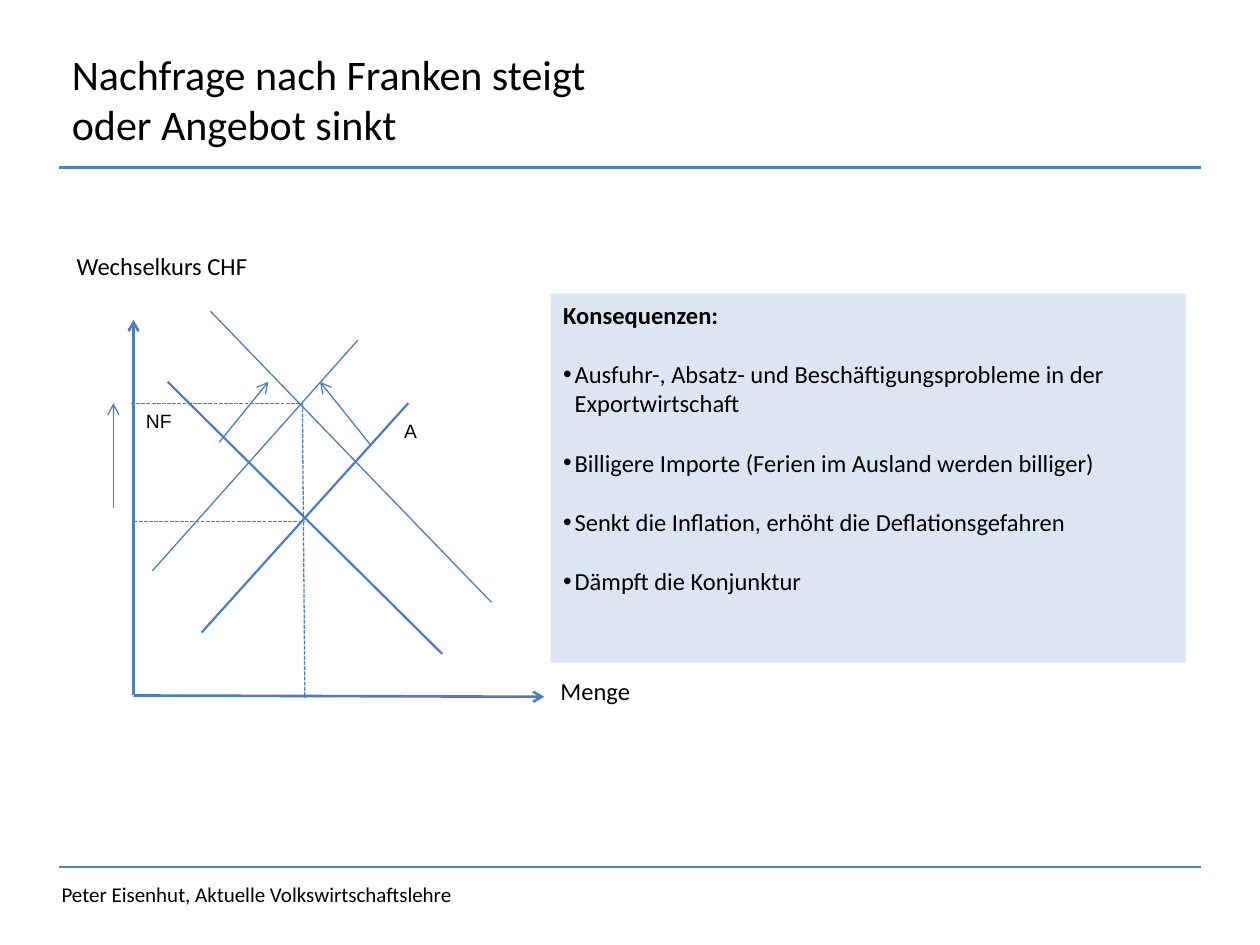
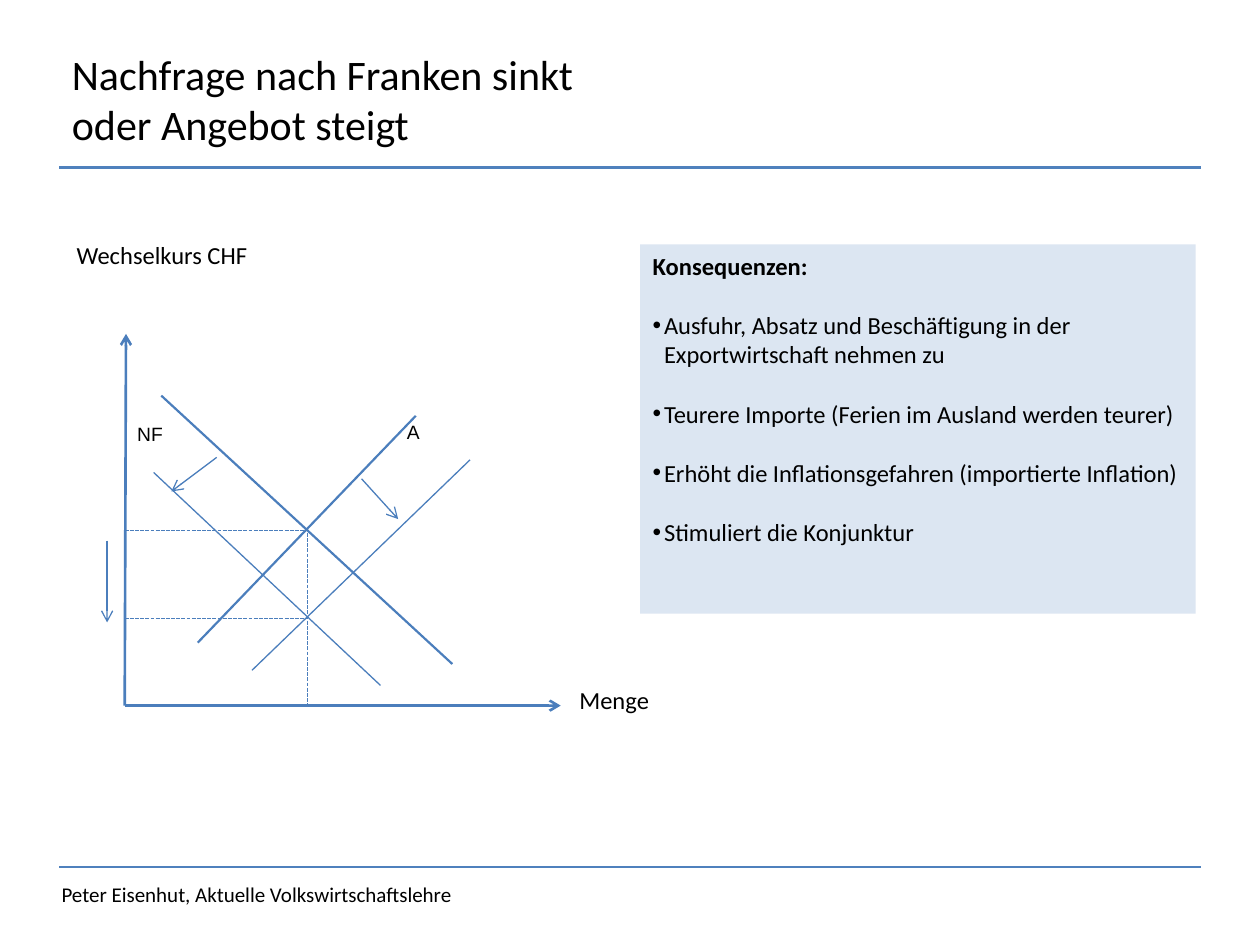
from lxml import etree
from pptx import Presentation
from pptx.dml.color import RGBColor
from pptx.enum.dml import MSO_LINE
from pptx.enum.shapes import MSO_CONNECTOR
from pptx.enum.text import MSO_ANCHOR, MSO_AUTO_SIZE, PP_ALIGN
from pptx.oxml.ns import qn
from pptx.util import Inches, Pt

BLACK = RGBColor(0x00, 0x00, 0x00)
RULE = RGBColor(0x4F, 0x81, 0xBD)
BLUE = RGBColor(0x4B, 0x7E, 0xBC)
PALE = RGBColor(0xDC, 0xE6, 0xF2)
DASH = MSO_LINE.SQUARE_DOT
STRAIGHT = MSO_CONNECTOR.STRAIGHT
MIDDLE = MSO_ANCHOR.MIDDLE
TOP = MSO_ANCHOR.TOP
FIXED = MSO_AUTO_SIZE.NONE
LEFT = PP_ALIGN.LEFT
FONT = "Calibri"
SMALL = "Arial"
FOOTER = "Peter Eisenhut, Aktuelle Volkswirtschaftslehre"
HEAD = "Konsequenzen:"
INDENT = Inches(0.09)
GAP = Pt(17)
THIN, BOLD, AXIS = 0.75, 1.25, 1.5


class Deck:
    def __init__(self):
        self.file = Presentation()
        self.file.slide_width = Inches(10)
        self.file.slide_height = Inches(7.5)
        self.slide = None

    def page(self, title):
        self.slide = self.file.slides.add_slide(self.file.slide_layouts[1])
        for y in (1.33, 6.88):
            self.line((0.47, y), (9.53, y), BOLD, color=RULE)
        self.label(FOOTER, (0.39, 6.95, 6.02, 0.3), 12)
        shape = self.slide.shapes.title
        self.place(shape, (0.47, 0.16, 7.89, 1.25))
        shape.text_frame.text = title
        self.style(shape.text_frame, 24, anchor=MIDDLE)

    def place(self, shape, area):
        shape.left, shape.top, shape.width, shape.height = map(Inches, area)

    def style(self, frame, size, font=FONT, anchor=TOP):
        frame.word_wrap = True
        frame.auto_size = FIXED
        frame.vertical_anchor = anchor
        for para in frame.paragraphs:
            para.alignment = LEFT
            for run in para.runs:
                run.font.name = font
                run.font.size = Pt(size)
                run.font.color.rgb = BLACK

    def label(self, text, area, size=14, font=FONT):
        box = self.slide.shapes.add_textbox(*map(Inches, area))
        box.text_frame.text = text
        self.style(box.text_frame, size, font)

    def line(self, start, end, width=THIN, arrow=False, dash=False, color=BLUE):
        ends = map(Inches, (*start, *end))
        link = self.slide.shapes.add_connector(STRAIGHT, *ends)
        link.line.color.rgb = color
        link.line.width = Pt(width)
        if dash:
            link.line.dash_style = DASH
        props = link.element.spPr
        if arrow:
            tip = etree.SubElement(props.find(qn("a:ln")), qn("a:tailEnd"))
            tip.set("type", "arrow")
        etree.SubElement(props, qn("a:effectLst"))

    def panel(self, area, items):
        body = self.slide.placeholders[1]
        self.place(body, area)
        body.fill.solid()
        body.fill.fore_color.rgb = PALE
        frame = body.text_frame
        frame.text = "\n".join([HEAD, *items])
        self.style(frame, 14)
        head, *rest = frame.paragraphs
        head.space_before = Pt(0)
        head.runs[0].font.bold = True
        self.bullet(head, 0)
        for para in rest:
            para.space_before = GAP
            self.bullet(para, INDENT, "•")

    def bullet(self, para, indent, sign=None):
        props = para._p.get_or_add_pPr()
        props.set("marL", str(indent))
        props.set("indent", str(-indent))
        if sign:
            etree.SubElement(props, qn("a:buFont")).set("typeface", SMALL)
            etree.SubElement(props, qn("a:buChar")).set("char", sign)
        else:
            etree.SubElement(props, qn("a:buNone"))

    def graph(self, zero, top, right, curves, shifts, moves, guides):
        for end in (top, right):
            self.line(zero, end, AXIS, arrow=True)
        for ends in curves:
            self.line(*ends, BOLD)
        for ends in shifts:
            self.line(*ends)
        for ends in moves:
            self.line(*ends, arrow=True)
        for ends in guides:
            self.line(*ends, dash=True)


def main():
    deck = Deck()

    deck.page("Nachfrage nach Franken steigt\voder Angebot sinkt")
    deck.panel((4.37, 2.33, 5.04, 2.93), [
        "Ausfuhr-, Absatz- und Beschäftigungsprobleme in der Exportwirtschaft",
        "Billigere Importe (Ferien im Ausland werden billiger)",
        "Senkt die Inflation, erhöht die Deflationsgefahren",
        "Dämpft die Konjunktur",
    ])
    deck.graph(
        zero=(1.06, 5.52), top=(1.06, 2.54), right=(4.32, 5.53),
        curves=[((1.33, 3.03), (3.51, 5.19)), ((1.6, 5.02), (3.24, 3.2))],
        shifts=[((1.67, 2.47), (3.9, 4.78)), ((1.21, 4.53), (2.84, 2.7))],
        moves=[((2.94, 3.53), (2.54, 3.03)), ((1.74, 3.51), (2.13, 3.03)),
               ((0.9, 4.03), (0.9, 3.2))],
        guides=[((1.06, 4.14), (2.42, 4.14)), ((2.4, 3.2), (2.42, 5.54)),
                ((1.04, 3.2), (2.4, 3.2))])
    deck.label("A", (3.11, 3.28, 0.68, 0.61), 11, SMALL)
    deck.label("NF", (1.06, 3.2, 0.68, 0.61), 11, SMALL)
    deck.label("Wechselkurs CHF", (0.51, 1.94, 1.74, 0.34))
    deck.label("Menge", (4.35, 5.32, 1.36, 0.34))

    deck.page("Nachfrage nach Franken sinkt\voder Angebot steigt")
    deck.panel((5.08, 1.94, 4.41, 2.93), [
        "Ausfuhr, Absatz und Beschäftigung in der Exportwirtschaft nehmen zu",
        "Teurere Importe (Ferien im Ausland werden teurer)",
        "Erhöht die Inflationsgefahren (importierte Inflation)",
        "Stimuliert die Konjunktur",
    ])
    deck.graph(
        zero=(0.99, 5.6), top=(1, 2.65), right=(4.45, 5.6),
        curves=[((1.28, 3.14), (3.59, 5.27)), ((1.57, 5.1), (3.3, 3.3))],
        shifts=[((3.02, 5.44), (1.22, 3.75)), ((2, 5.32), (3.73, 3.65))],
        moves=[((1.72, 3.63), (1.36, 3.9)), ((2.87, 3.8), (3.16, 4.12)),
               ((0.85, 4.29), (0.85, 4.94))],
        guides=[((0.99, 4.21), (2.44, 4.21)), ((2.44, 4.23), (2.44, 5.61)),
                ((0.99, 4.91), (2.44, 4.91))])
    deck.label("A", (3.13, 3.29, 0.72, 0.6), 11, SMALL)
    deck.label("NF", (0.99, 3.3, 0.72, 0.6), 11, SMALL)
    deck.label("Wechselkurs CHF", (0.51, 1.86, 1.59, 0.34))
    deck.label("Menge", (4.5, 5.39, 1.44, 0.34))

    deck.file.save("out.pptx")


if __name__ == "__main__":
    main()
